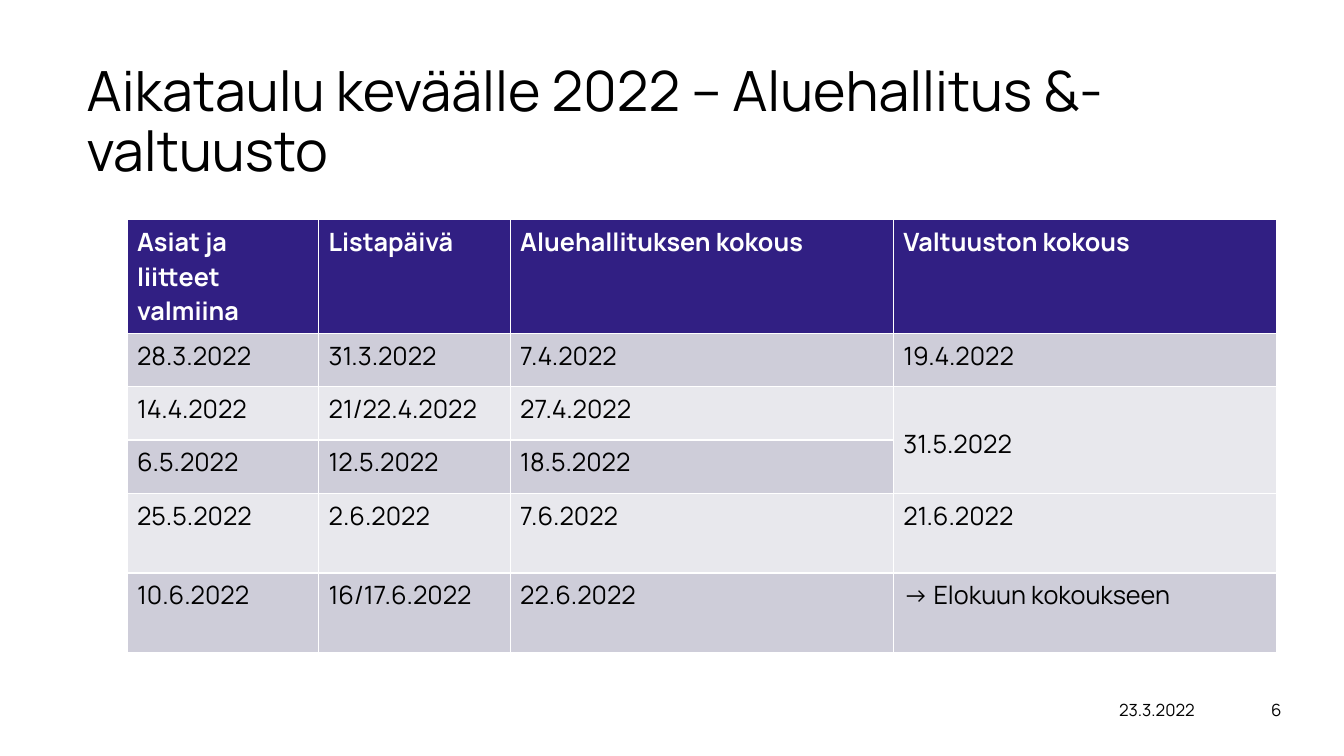
import pptx
import pptx.util
import pptx.dml.color
import pptx.enum.text

Inches, Pt = pptx.util.Inches, pptx.util.Pt
MIDDLE = pptx.enum.text.MSO_ANCHOR.MIDDLE

# Content
TITLE = "Aikataulu keväälle 2022 – Aluehallitus &-valtuusto"
SCHEDULE = [
    ("Asiat ja liitteet valmiina", "Listapäivä", "Aluehallituksen kokous", "Valtuuston kokous"),
    ("28.3.2022", "31.3.2022", "7.4.2022", "19.4.2022"),
    ("14.4.2022", "21/22.4.2022", "27.4.2022", "31.5.2022"),
    ("6.5.2022", "12.5.2022", "18.5.2022", ""),
    ("25.5.2022", "2.6.2022", "7.6.2022", "21.6.2022"),
    ("10.6.2022", "16/17.6.2022", "22.6.2022", "-> Elokuun kokoukseen"),
]
FOOTER = [("23.3.2022", 10.96, 1.03), ("6", 12.33, 0.66)]  # text, left, width

# Style
FONT = "Manrope"
COLORS = {"text": "000000", "header_text": "FFFFFF", "header": "311F83",
          "dark_band": "CECDD9", "light_band": "E8E8ED"}
ROW_FILLS = ["header", "dark_band", "light_band", "dark_band", "light_band", "dark_band"]
COLUMN_WIDTHS = [1.9, 1.9, 3.8, 3.8]
ROW_HEIGHTS = [1.11, 0.53, 0.53, 0.53, 0.79, 0.79]


def rgb(name):
    return pptx.dml.color.RGBColor.from_string(COLORS[name])


def write(frame, text, size, color="text", bold=False):
    frame.text = text
    para = frame.paragraphs[0]
    para.font.size = Pt(size)
    for span in para.runs:
        span.font.name = FONT
        span.font.size = Pt(size)
        span.font.bold = bold
        span.font.color.rgb = rgb(color)
    return para


deck = pptx.Presentation()
deck.slide_width, deck.slide_height = Inches(13.33), Inches(7.5)
page = deck.slides.add_slide(deck.slide_layouts[5])

# Title
title = page.shapes.title
title.left, title.top = Inches(0.76), Inches(0.89)
title.width, title.height = Inches(10.47), Inches(0.67)
frame = title.text_frame
frame.word_wrap = True
frame.auto_size = pptx.enum.text.MSO_AUTO_SIZE.NONE
frame.vertical_anchor = MIDDLE
para = write(frame, TITLE, 39.6)
para.alignment = pptx.enum.text.PP_ALIGN.LEFT
para.line_spacing = 0.9

# Schedule table
table = page.shapes.add_table(
    len(SCHEDULE), len(COLUMN_WIDTHS), Inches(1.26), Inches(2.18),
    Inches(sum(COLUMN_WIDTHS)), Inches(sum(ROW_HEIGHTS))).table
for column, width in zip(table.columns, COLUMN_WIDTHS):
    column.width = Inches(width)
for row, height in zip(table.rows, ROW_HEIGHTS):
    row.height = Inches(height)

for row_index, (texts, fill) in enumerate(zip(SCHEDULE, ROW_FILLS)):
    is_header = row_index == 0
    for column_index, text in enumerate(texts):
        cell = table.cell(row_index, column_index)
        cell.fill.solid()
        cell.fill.fore_color.rgb = rgb(fill)
        write(cell.text_frame, text, 18, "header_text" if is_header else "text", is_header)

# One council meeting covers two rows
shared_meeting = table.cell(2, 3)
shared_meeting.merge(table.cell(3, 3))
shared_meeting.vertical_anchor = MIDDLE
shared_meeting.margin_top = Inches(0.12)

# Date and page number
for text, left, width in FOOTER:
    box = page.shapes.add_textbox(Inches(left), Inches(6.84), Inches(width), Inches(0.4))
    box.text_frame.word_wrap = True
    box.text_frame.vertical_anchor = MIDDLE
    write(box.text_frame, text, 12).alignment = pptx.enum.text.PP_ALIGN.CENTER

deck.save("out.pptx")
